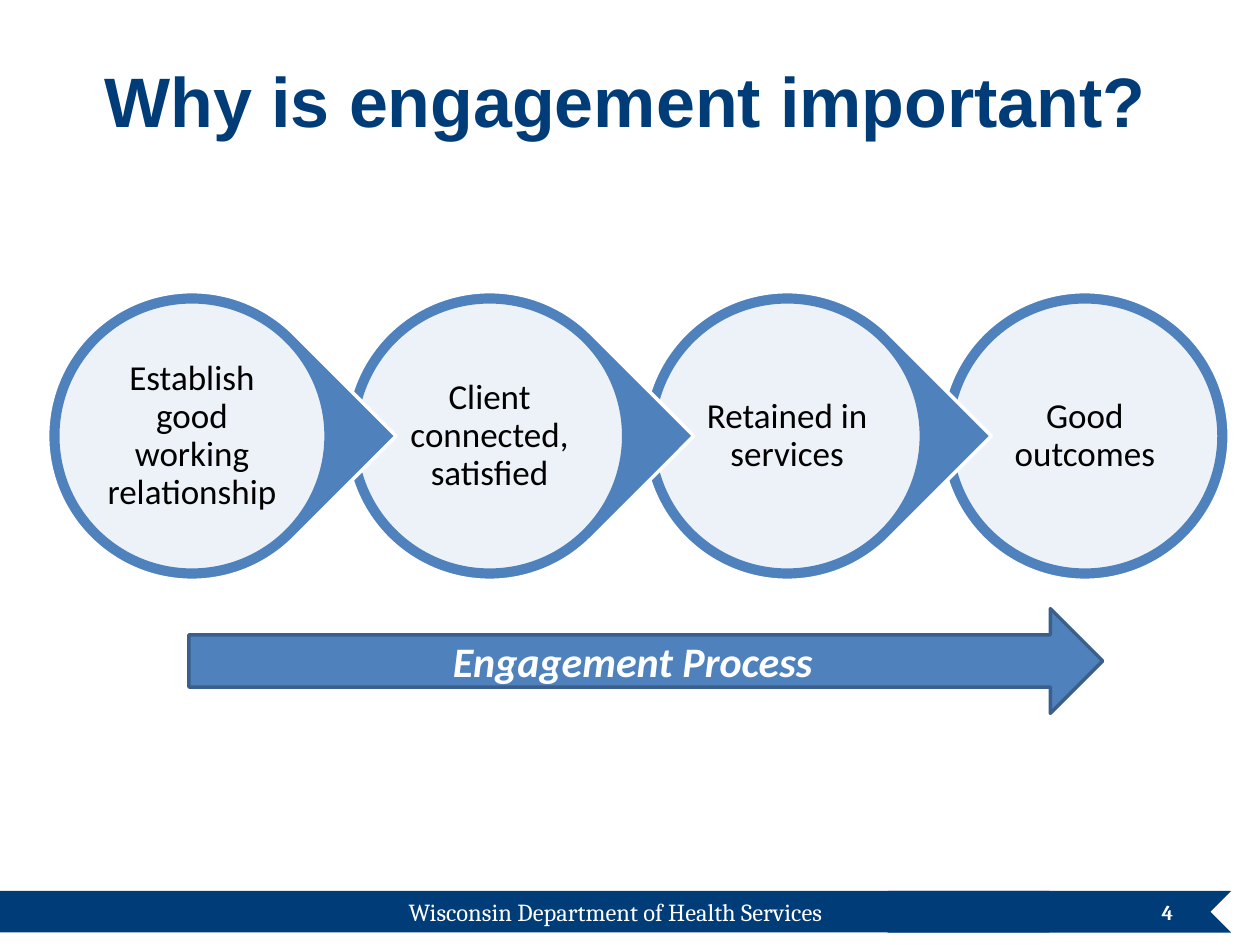
from lxml.etree import SubElement
from pptx import Presentation
from pptx.dml.color import RGBColor
from pptx.enum.shapes import MSO_SHAPE
from pptx.enum.text import MSO_ANCHOR, PP_ALIGN
from pptx.oxml.ns import qn
from pptx.util import Cm, Pt

NAVY, BLUE, EDGE, WHITE, BLACK = "003D78", "4F81BD", "3A5F8C", "FFFFFF", "000000"
STEPS = [
    "Establish good working relationship",
    "Client connected, satisfied",
    "Retained in services",
    "Good outcomes",
]
FIRST_CENTER, STEP_PITCH, MIDDLE = 3.87, 6, 8.79
RING, DISC, LABEL = 5.82, 5.41, 3.86


def color(value):
    return RGBColor.from_string(value)


def add_shape(slide, kind, left, top, width, height, fill, line=None):
    shape = slide.shapes.add_shape(kind, Cm(left), Cm(top), Cm(width), Cm(height))
    shape.shadow.inherit = False
    shape.fill.solid()
    shape.fill.fore_color.rgb = color(fill)
    if line:
        shape.line.color.rgb = color(line)
        shape.line.width = Pt(2)
    else:
        shape.line.fill.background()
    return shape


def add_centered(slide, kind, center, size, fill, line):
    return add_shape(slide, kind, center - size / 2, MIDDLE - size / 2,
                     size, size, fill, line)


def set_opacity(shape, percent):
    fill = shape.fill._xPr.find(qn("a:solidFill"))
    SubElement(fill[0], qn("a:alpha")).set("val", str(percent * 1000))


def write(shape, text, size, font, ink, bold=False, italic=False,
          align=PP_ALIGN.CENTER, anchor=MSO_ANCHOR.MIDDLE):
    frame = shape.text_frame
    frame.word_wrap = True
    frame.vertical_anchor = anchor
    frame.text = text
    para = frame.paragraphs[0]
    para.alignment = align
    span = para.runs[0].font
    span.size, span.name = Pt(size), font
    span.bold, span.italic = bold, italic
    span.color.rgb = color(ink)
    return frame


def add_text(slide, left, top, width, height, *content, **style):
    box = slide.shapes.add_textbox(Cm(left), Cm(top), Cm(width), Cm(height))
    return write(box, *content, **style)


def add_step(slide, center, text, last):
    # Ring, pointing to the next step unless it is the last one
    kind = MSO_SHAPE.OVAL if last else MSO_SHAPE.TEAR
    ring = add_centered(slide, kind, center, RING, BLUE, WHITE)
    ring.rotation = 0 if last else 45
    disc = add_centered(slide, MSO_SHAPE.OVAL, center, DISC, WHITE, BLUE)
    set_opacity(disc, 90)

    # Label
    frame = add_text(slide, center - LABEL / 2, MIDDLE - LABEL / 2, LABEL, LABEL,
                     text, 20, "Calibri", BLACK)
    frame.margin_left = frame.margin_right = Cm(0.08)
    frame.margin_top = frame.margin_bottom = Cm(0.08)
    frame.paragraphs[0].line_spacing = 0.9


def add_footer(slide):
    ribbon_end = add_shape(slide, MSO_SHAPE.CHEVRON, 17.48, 17.96, 7.34, 0.84, NAVY)
    ribbon_end.rotation = 180
    add_shape(slide, MSO_SHAPE.RECTANGLE, 0, 17.96, 21.16, 0.84, NAVY)
    add_text(slide, 0, 17.96, 24.82, 0.86, "Wisconsin Department of Health Services",
             14, "Cambria", WHITE, anchor=MSO_ANCHOR.TOP)
    add_text(slide, 17.98, 17.88, 5.92, 1.02, "4", 12, "Cambria", WHITE,
             bold=True, align=PP_ALIGN.RIGHT)


def main():
    deck = Presentation()
    deck.slide_width, deck.slide_height = Cm(25.4), Cm(19.05)
    page = deck.slides.add_slide(deck.slide_layouts[6])

    add_footer(page)

    # Title
    add_text(page, 1.07, 0, 23.06, 4.01, "Why is engagement important?",
             40, "Arial", NAVY, bold=True)

    # Steps from right to left, so each point overlaps the next ring
    for index, text in reversed(list(enumerate(STEPS))):
        add_step(page, FIRST_CENTER + index * STEP_PITCH, text,
                 last=index == len(STEPS) - 1)

    # Process arrow
    arrow = add_shape(page, MSO_SHAPE.RIGHT_ARROW, 3.81, 12.27, 18.42, 2.11, BLUE, EDGE)
    write(arrow, "Engagement Process", 24, "Calibri", WHITE, bold=True, italic=True)

    deck.save("out.pptx")


if __name__ == "__main__":
    main()
